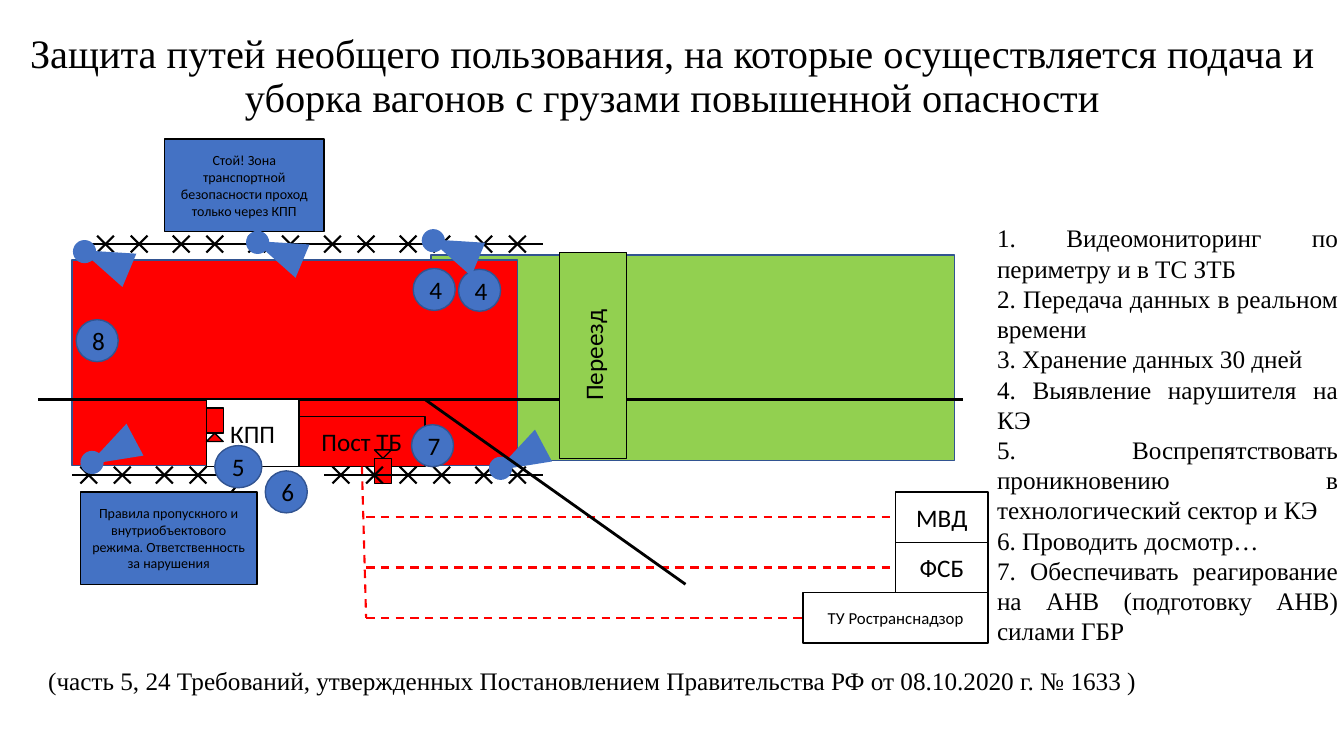
from math import cos, radians, sin
from typing import NamedTuple

from lxml.etree import SubElement
from pptx import Presentation
from pptx.dml.color import RGBColor
from pptx.enum.dml import MSO_LINE
from pptx.enum.shapes import MSO_CONNECTOR, MSO_SHAPE
from pptx.enum.text import MSO_ANCHOR, PP_ALIGN
from pptx.oxml.ns import qn
from pptx.util import Inches, Pt

COLORS = {
    "black": "000000",
    "white": "FFFFFF",
    "blue": "4472C4",
    "navy": "325491",
    "red": "FF0000",
    "green": "92D050",
}
SERIF = "Times New Roman"
SANS = "Calibri"
BOTTOM, LEFT = 2, 1
DUTIES = [
    "1. Видеомониторинг по периметру и в ТС ЗТБ",
    "2. Передача данных в реальном времени",
    "3. Хранение данных 30 дней",
    "4. Выявление нарушителя на КЭ",
    "5. Воспрепятствовать проникновению в технологический сектор и КЭ",
    "6. Проводить досмотр…",
    "7. Обеспечивать реагирование на АНВ (подготовку АНВ) силами ГБР",
]


class Box(NamedTuple):
    left: float
    top: float
    width: float
    height: float


def color(name):
    return RGBColor.from_string(COLORS[name])


def write_paragraphs(frame, lines, size, font_name, alignment, spacing=None):
    frame.word_wrap = True
    for index, line in enumerate(lines):
        paragraph = frame.paragraphs[0] if index == 0 else frame.add_paragraph()
        paragraph.text = line
        paragraph.alignment = alignment
        if spacing:
            paragraph.line_spacing = spacing
        paragraph.font.size = Pt(size)
        paragraph.font.name = font_name
        paragraph.font.color.rgb = color("black")


def add_text(slide, box, lines, size, alignment, anchor=MSO_ANCHOR.TOP, spacing=None):
    text_box = slide.shapes.add_textbox(*map(Inches, box))
    text_box.text_frame.vertical_anchor = anchor
    write_paragraphs(text_box.text_frame, lines, size, SERIF, alignment, spacing)


class Scheme:
    """Grid of 113 columns and 60 rows on which the site plan is laid out."""

    def __init__(self, slide, box):
        self.shapes = slide.shapes
        self.box = box
        self.column = box.width / 113
        self.row = box.height / 60

    def point(self, x, y):
        return (Inches(self.box.left + x * self.column),
                Inches(self.box.top + y * self.row))

    def shape(self, kind, x, y, columns, rows, fill, outline="black", text=None, size=18):
        shape = self.shapes.add_shape(
            kind, *self.point(x, y),
            Inches(columns * self.column), Inches(rows * self.row))
        shape.shadow.inherit = False
        shape.fill.solid()
        shape.fill.fore_color.rgb = color(fill)
        if outline:
            shape.line.color.rgb = color(outline)
            shape.line.width = Pt(1)
        else:
            shape.line.fill.background()
        if text:
            shape.text_frame.vertical_anchor = MSO_ANCHOR.MIDDLE
            write_paragraphs(shape.text_frame, [text], size, SANS, PP_ALIGN.CENTER)
        return shape

    def block(self, *place, **look):
        return self.shape(MSO_SHAPE.FLOWCHART_PROCESS, *place, **look)

    def line(self, start, end, width=1.5, stroke="black", dashed=False):
        connector = self.shapes.add_connector(
            MSO_CONNECTOR.STRAIGHT, *self.point(*start), *self.point(*end))
        connector.line.color.rgb = color(stroke)
        connector.line.width = Pt(width)
        if dashed:
            connector.line.dash_style = MSO_LINE.DASH
        SubElement(connector.element.spPr, qn("a:effectLst"))
        return connector

    def fence(self, x, y):
        """One section: a wire with two crosses on it."""
        self.line((x, y), (x + 9, y))
        for center in (x + 2, x + 6):
            for slope in (-1, 1):
                self.line((center - 1, y - slope), (center + 1, y + slope))

    def camera(self, x, y, angle):
        """A round body at (x, y) with its field of view behind the apex."""
        view_x = x - 2.66 * sin(radians(angle))
        view_y = y + 2.66 * cos(radians(angle))
        self.shape(MSO_SHAPE.OVAL, x - 1.38, y - 1.38, 2.76, 2.76, "blue", None)
        view = self.shape(MSO_SHAPE.ISOSCELES_TRIANGLE, view_x - 2.15, view_y - 3.12,
                          4.3, 6.24, "blue", None)
        view.rotation = angle

    def sentry(self, x, body_y, head_y, angle):
        self.block(x, body_y, 2, 3, fill="red")
        head = self.shape(MSO_SHAPE.ISOSCELES_TRIANGLE, x, head_y, 2, 1, "red")
        head.rotation = angle

    def badge(self, number, x, y, columns=5):
        self.shape(MSO_SHAPE.OVAL, x, y, columns, 5, "blue", "navy", number)


def draw_zones_and_posts(scheme):
    """Draws the two zones, the track, signs and posts; returns the security post."""
    scheme.shape(MSO_SHAPE.RECTANGLE, 46.7, 13.8, 62.3, 24.5, "green", "navy")
    scheme.shape(MSO_SHAPE.RECTANGLE, 4, 14.4, 53, 24.5, "red", "navy")
    scheme.line((0, 31), (110, 31), 2)
    scheme.block(15, 0, 19, 11, fill="blue", size=10,
                 text="Стой! Зона транспортной безопасности проход только через КПП")
    scheme.block(5, 42, 21, 11, fill="blue", size=10,
                 text="Правила пропускного и внутриобъектового режима. "
                      "Ответственность за нарушения")
    rules_link = scheme.line((25.5, 39), (23, 42))
    checkpoint = scheme.block(20, 31, 11, 8, fill="white", text="КПП")
    rules_link.begin_connect(checkpoint, BOTTOM)
    post = scheme.block(31, 33, 15, 6, fill="red", text="Пост ТБ")
    scheme.sentry(20, 32, 35, 0)
    scheme.sentry(40, 38, 37, 180)
    return post


def draw_agencies(scheme, post):
    agencies = [("МВД", 102, 42, 18), ("ФСБ", 102, 48, 18),
                ("ТУ Ространснадзор", 91, 54, 12)]
    trunk = scheme.line((38.5, 39), (39, 57), stroke="red", dashed=True)
    trunk.begin_connect(post, BOTTOM)
    for name, x, y, size in agencies:
        agency = scheme.block(x, y, 113 - x, 6, fill="white", text=name, size=size)
        link = scheme.line((39, y + 3), (x, y + 3), stroke="red", dashed=True)
        link.end_connect(agency, LEFT)


def draw_perimeter(scheme):
    for section in range(6):
        scheme.fence(6 + 9 * section, 12.5)
    for x in (4, 13, 34, 42, 51):
        scheme.fence(x, 40)
    crossing = scheme.block(62, 13.5, 8, 24.5, fill="green", text="Переезд")
    crossing.element.find(".//" + qn("a:bodyPr")).set("vert", "vert270")
    for badge in [("4", 44.6, 15.4), ("5", 21, 36.5, 5.6), ("6", 27, 39.5),
                  ("7", 44.4, 34), ("8", 4.5, 21.5), ("4", 50, 15.5)]:
        scheme.badge(*badge)
    for x, y in [(5.5, 13.4), (26.1, 12.3), (47, 12.1)]:
        scheme.camera(x, y, 292.6)
    for x, y in [(55, 39.2), (6.4, 38.5)]:
        scheme.camera(x, y, 241.9)


def draw_scheme(slide, box):
    scheme = Scheme(slide, box)
    post = draw_zones_and_posts(scheme)
    draw_agencies(scheme, post)
    draw_perimeter(scheme)
    scheme.line((46, 31), (77, 53), 2)


def main():
    presentation = Presentation()
    presentation.slide_width = Inches(13.33)
    presentation.slide_height = Inches(7.5)
    slide = presentation.slides.add_slide(presentation.slide_layouts[6])
    add_text(slide, Box(0, 0.31, 13.34, 0.92),
             ["Защита путей необщего пользования, на которые осуществляется "
              "подача и уборка вагонов с грузами повышенной опасности"],
             28.8, PP_ALIGN.CENTER, MSO_ANCHOR.MIDDLE, 0.9)
    add_text(slide, Box(0.38, 6.55, 12.57, 0.4),
             ["(часть 5, 24 Требований, утвержденных Постановлением "
              "Правительства РФ от 08.10.2020 г. № 1633 )"],
             18, PP_ALIGN.JUSTIFY)
    draw_scheme(slide, Box(0.38, 1.38, 9.42, 5))
    add_text(slide, Box(9.79, 2.16, 3.58, 4.34), DUTIES, 18, PP_ALIGN.JUSTIFY)
    presentation.save("out.pptx")


if __name__ == "__main__":
    main()
